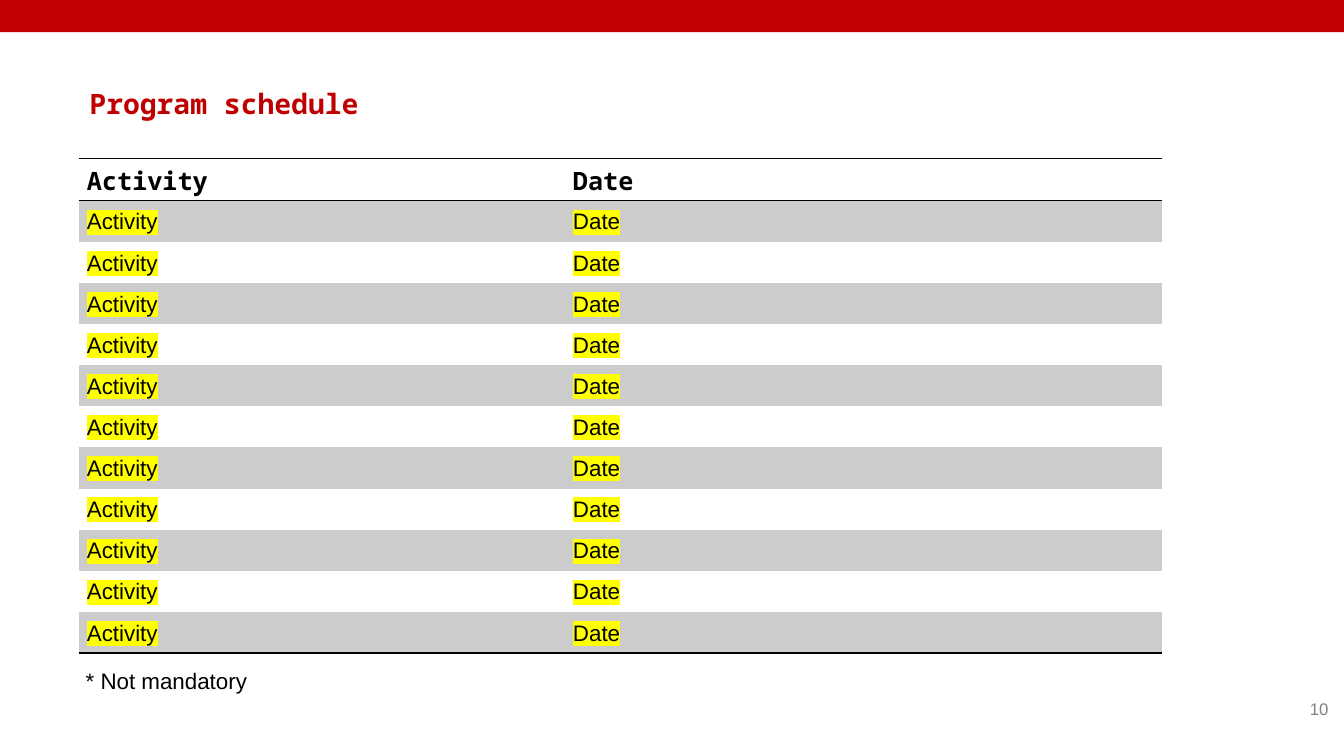
from lxml.etree import SubElement as Sub
from pptx import Presentation
from pptx.dml.color import RGBColor
from pptx.enum.shapes import MSO_SHAPE as Shape
from pptx.enum.text import MSO_ANCHOR as Anchor, PP_ALIGN as Align
from pptx.oxml.ns import qn
from pptx.util import Cm, Pt

# Content
TITLE = "Program schedule"
HEAD = ("Activity", "Date")
ROWS = [("Activity", "Date")] * 11
NOTE = "* Not mandatory"
PAGE = "10"

# Look
RED = RGBColor(0xC0, 0x00, 0x00)
BLACK = RGBColor(0x00, 0x00, 0x00)
BAND = RGBColor(0xCC, 0xCC, 0xCC)
GRAY = RGBColor(0x80, 0x80, 0x80)
YELLOW = RGBColor(0xFF, 0xFF, 0x00)
MONO, SANS = "Noto Sans Mono", "Arial"
PLAIN = "{2D5ABB26-0587-4C30-8999-92F81FD0307C}"  # no style, no grid

# Sizes in cm
WIDE, HIGH = 33.87, 19.05
LEFT, TOP = 2.0, 3.99
COLS = (12.25, 15.03)
HEAD_H, TABLE_H = 1.07, 12.47
ROW_H = (TABLE_H - HEAD_H) / len(ROWS)


def write(text, frame, size=16, font=SANS, color=BLACK, bold=False,
          align=Align.LEFT, space=1.0, mark=None):
    para = frame.paragraphs[0]
    para.alignment = align
    para.line_spacing = space
    para.space_before = Pt(0)
    run = para.add_run()
    run.text = text
    run.font.size = Pt(size)
    run.font.bold = bold
    run.font.color.rgb = color
    if mark:
        light = Sub(run.font._element, qn("a:highlight"))
        Sub(light, qn("a:srgbClr"), val=str(mark))
    run.font.name = font


def rule(cell, side):
    line = Sub(cell._tc.get_or_add_tcPr(), qn("a:" + side), w=str(Pt(1)))
    fill = Sub(line, qn("a:solidFill"))
    Sub(fill, qn("a:srgbClr"), val=str(BLACK))


def add_box(slide, x, y, w, h):
    box = slide.shapes.add_textbox(Cm(x), Cm(y), Cm(w), Cm(h))
    box.text_frame.word_wrap = True
    return box.text_frame


def add_grid(slide):
    rows = [HEAD] + ROWS
    frame = slide.shapes.add_table(len(rows), len(HEAD), Cm(LEFT), Cm(TOP),
                                   Cm(sum(COLS)), Cm(TABLE_H))
    table = frame.table
    table.horz_banding = False
    table._tbl.tblPr.find(qn("a:tableStyleId")).text = PLAIN
    for col, width in zip(table.columns, COLS):
        col.width = Cm(width)
    for r, texts in enumerate(rows):
        table.rows[r].height = Cm(ROW_H if r else HEAD_H)
        for c, text in enumerate(texts):
            cell = table.cell(r, c)
            cell.margin_left = cell.margin_right = Cm(0.19)
            cell.margin_top = cell.margin_bottom = 0
            cell.vertical_anchor = Anchor.MIDDLE
            # Rules around the head and under the last row
            if r == 0:
                rule(cell, "lnT")
            if r in (0, len(rows) - 1):
                rule(cell, "lnB")
            # Every other row is banded
            if r % 2:
                cell.fill.solid()
                cell.fill.fore_color.rgb = BAND
            else:
                cell.fill.background()
            if r:
                write(text, cell.text_frame, space=1.07, mark=YELLOW)
            else:
                write(text, cell.text_frame, size=18, font=MONO, bold=True,
                      space=1.07)


def main():
    deck = Presentation()
    deck.slide_width, deck.slide_height = Cm(WIDE), Cm(HIGH)
    slide = deck.slides.add_slide(deck.slide_layouts[5])

    # Top bar
    bar = slide.shapes.add_shape(Shape.RECTANGLE, 0, 0, Cm(WIDE), Cm(0.81))
    bar.shadow.inherit = False
    bar.fill.solid()
    bar.fill.fore_color.rgb = RED
    bar.line.fill.background()

    # Title
    title = slide.shapes.title
    title.left, title.top = Cm(LEFT), Cm(2.0)
    title.width, title.height = Cm(29.18), Cm(1.09)
    title.text_frame.vertical_anchor = Anchor.TOP
    write(TITLE, title.text_frame, size=20, font=MONO, color=RED, bold=True,
          space=1.07)

    # Schedule, note and page number
    add_grid(slide)
    write(NOTE, add_box(slide, 1.91, 16.69, 6.88, 0.94))
    page = add_box(slide, 26.11, 17.35, 7.62, 1.02)
    page.vertical_anchor = Anchor.MIDDLE
    write(PAGE, page, size=12, color=GRAY, align=Align.RIGHT)

    deck.save("out.pptx")


if __name__ == "__main__":
    main()
